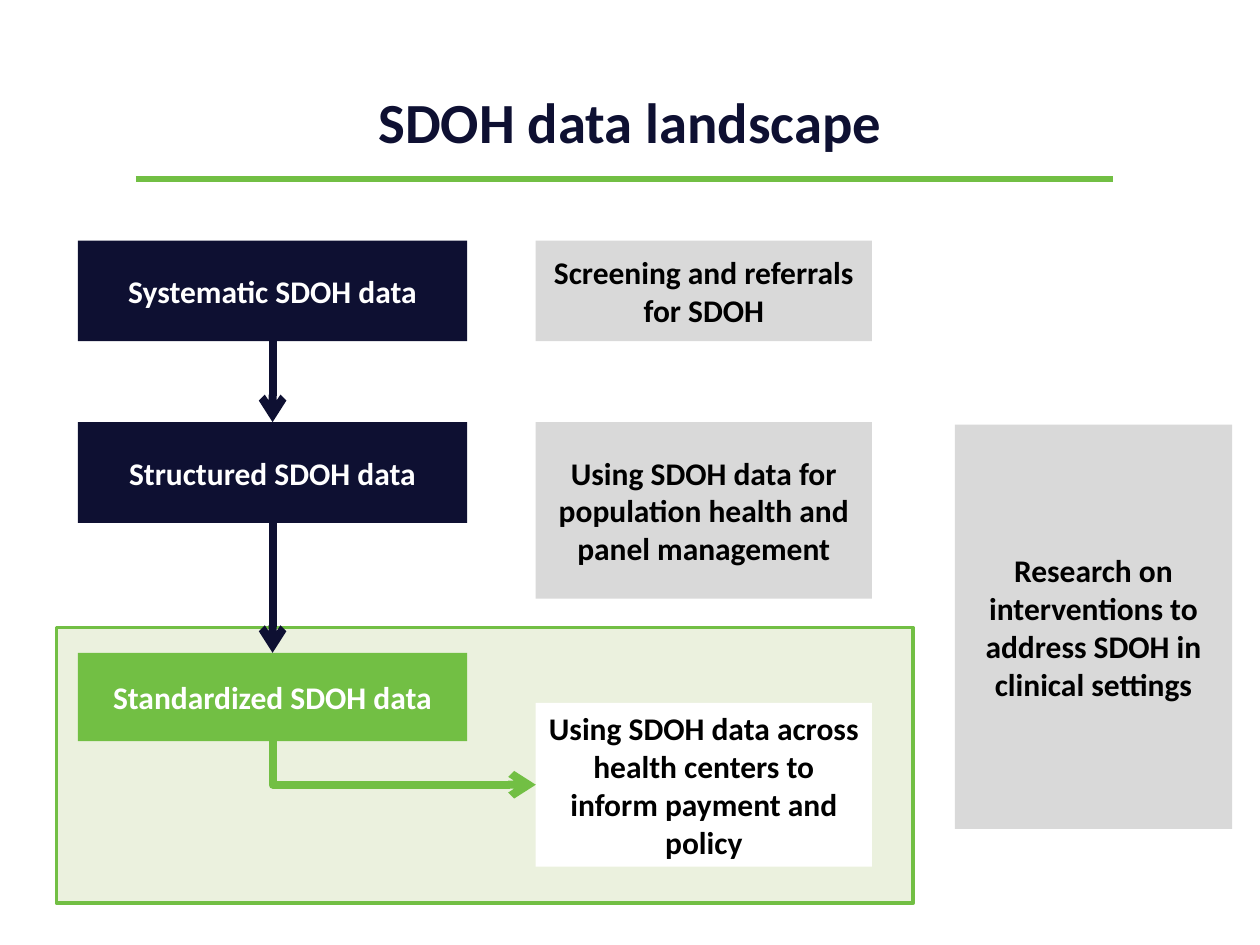
from collections import namedtuple

from lxml import etree
from pptx import Presentation
from pptx import util as u
from pptx.dml.color import RGBColor
from pptx.enum import shapes, text
from pptx.oxml.ns import qn

NAVY = RGBColor(0x0E, 0x10, 0x32)
GREEN = RGBColor(0x72, 0xBF, 0x44)
PALE_GREEN = RGBColor(0xEB, 0xF1, 0xDE)
GREY = RGBColor(0xD9, 0xD9, 0xD9)
WHITE = RGBColor(0xFF, 0xFF, 0xFF)
BLACK = RGBColor(0, 0, 0)

LABEL_FORMAT = {"name": "Calibri", "size": u.Pt(18), "bold": True}
TITLE_FORMAT = {**LABEL_FORMAT, "size": u.Pt(32.4)}

Box = namedtuple("Box", "left top width height")

STAGES = [
    ("Systematic SDOH data", 0, 2.03, NAVY),
    ("Structured SDOH data", 3.66, 2.03, NAVY),
    ("Standardized SDOH data", 8.31, 1.78, GREEN),
]
USES = [
    ("Screening and referrals for SDOH", 0, 2.03, GREY),
    ("Using SDOH data for population health and panel management", 3.66, 3.56, GREY),
    ("Using SDOH data across health centers to inform payment and policy", 9.32, 3.3, WHITE),
]


def write(frame, wording, font_format, colour):
    """Fill a text frame with one centred, formatted paragraph."""
    frame.text = wording
    frame.word_wrap = True
    frame.vertical_anchor = text.MSO_ANCHOR.MIDDLE
    paragraph = frame.paragraphs[0]
    paragraph.alignment = text.PP_ALIGN.CENTER
    font = paragraph.runs[0].font
    for attribute, value in font_format.items():
        setattr(font, attribute, value)
    font.color.rgb = colour


def add_block(slide, box, fill, outline=None):
    """Add a flat rectangle, outlined only when a colour is given."""
    block = slide.shapes.add_shape(shapes.MSO_SHAPE.RECTANGLE, *map(u.Cm, box))
    block.shadow.inherit = False
    block.fill.solid()
    block.fill.fore_color.rgb = fill
    if outline is None:
        block.line.fill.background()
    else:
        block.line.color.rgb = outline
        block.line.width = u.Pt(2)
    return block


def add_label(slide, box, wording, fill):
    """Add a filled rectangle with a bold label that contrasts with it."""
    label = add_block(slide, box, fill)
    write(label.text_frame, wording, LABEL_FORMAT, WHITE if fill in (NAVY, GREEN) else BLACK)
    return label


def add_line(slide, kind, ends, colour, weight, arrow=False):
    """Add a connector between two points, with an arrowhead if wanted."""
    line = slide.shapes.add_connector(kind, *(u.Emu(int(end)) for end in ends))
    line.line.color.rgb = colour
    line.line.width = u.Pt(weight)
    properties = line.element.spPr
    if arrow:
        etree.SubElement(properties.find(qn("a:ln")), qn("a:tailEnd"), type="arrow")
    etree.SubElement(properties, qn("a:effectLst"))
    return line


def add_down_arrow(slide, upper, lower):
    """Point from the bottom of one block to the top of the next."""
    centre = upper.left + upper.width // 2
    ends = (centre, upper.top + upper.height, centre, lower.top)
    add_line(slide, shapes.MSO_CONNECTOR.STRAIGHT, ends, NAVY, 4.5, arrow=True)


def add_corner_arrow(slide, stage, use):
    """Run down from a stage, then right into the middle of a use."""
    start_x, start_y = stage.left + stage.width / 2, stage.top + stage.height
    end_x, end_y = use.left, use.top + use.height / 2
    middle_x, middle_y = (start_x + end_x) / 2, (start_y + end_y) / 2
    half_run, half_drop = (end_x - start_x) / 2, (end_y - start_y) / 2
    ends = (middle_x + half_drop, middle_y - half_run, middle_x - half_drop, middle_y + half_run)
    corner = add_line(slide, shapes.MSO_CONNECTOR.ELBOW, ends, GREEN, 4.5, arrow=True)
    properties = corner.element.spPr
    properties.find(qn("a:xfrm")).set("rot", str(270 * 60000))
    properties.find(qn("a:prstGeom")).set("prst", "bentConnector2")


def add_heading(slide, box):
    """Place the title and the green rule beneath it."""
    title = slide.shapes.title
    for attribute, value in box._asdict().items():
        setattr(title, attribute, u.Cm(value))
    write(title.text_frame, "SDOH data landscape", TITLE_FORMAT, NAVY)
    rule_y = box.top + box.height
    ends = map(u.Cm, (box.left + 1.47, rule_y, box.left + 21.16, rule_y))
    add_line(slide, shapes.MSO_CONNECTOR.STRAIGHT, ends, GREEN, 3)


def add_column(slide, box, entries):
    """Stack labelled blocks down a column and return them."""
    return [
        add_label(slide, Box(box.left, box.top + offset, box.width, height), wording, fill)
        for wording, offset, height, fill in entries
    ]


def add_landscape(slide, box):
    """Draw the data stages, their uses and the arrows that join them."""
    add_block(slide, Box(box.left - 0.43, box.top + 7.8, 17.27, 5.56), PALE_GREEN, GREEN)
    stages = add_column(slide, Box(box.left, box.top, 7.85, box.height), STAGES)
    uses = add_column(slide, Box(box.left + 9.23, box.top, 6.78, box.height), USES)
    for upper, lower in zip(stages, stages[1:]):
        add_down_arrow(slide, upper, lower)
    add_corner_arrow(slide, stages[-1], uses[-1])


def main():
    """Build and save the slide."""
    deck = Presentation()
    deck.slide_width, deck.slide_height = u.Cm(25.4), u.Cm(19.05)
    slide = deck.slides.add_slide(deck.slide_layouts[5])
    add_heading(slide, Box(1.27, 1.27, 22.86, 2.34))
    add_landscape(slide, Box(1.57, 4.85, 16.01, 12.62))
    research = "Research on interventions to address SDOH in clinical settings"
    add_label(slide, Box(19.25, 8.56, 5.59, 8.15), research, GREY)
    deck.save("out.pptx")


if __name__ == "__main__":
    main()
